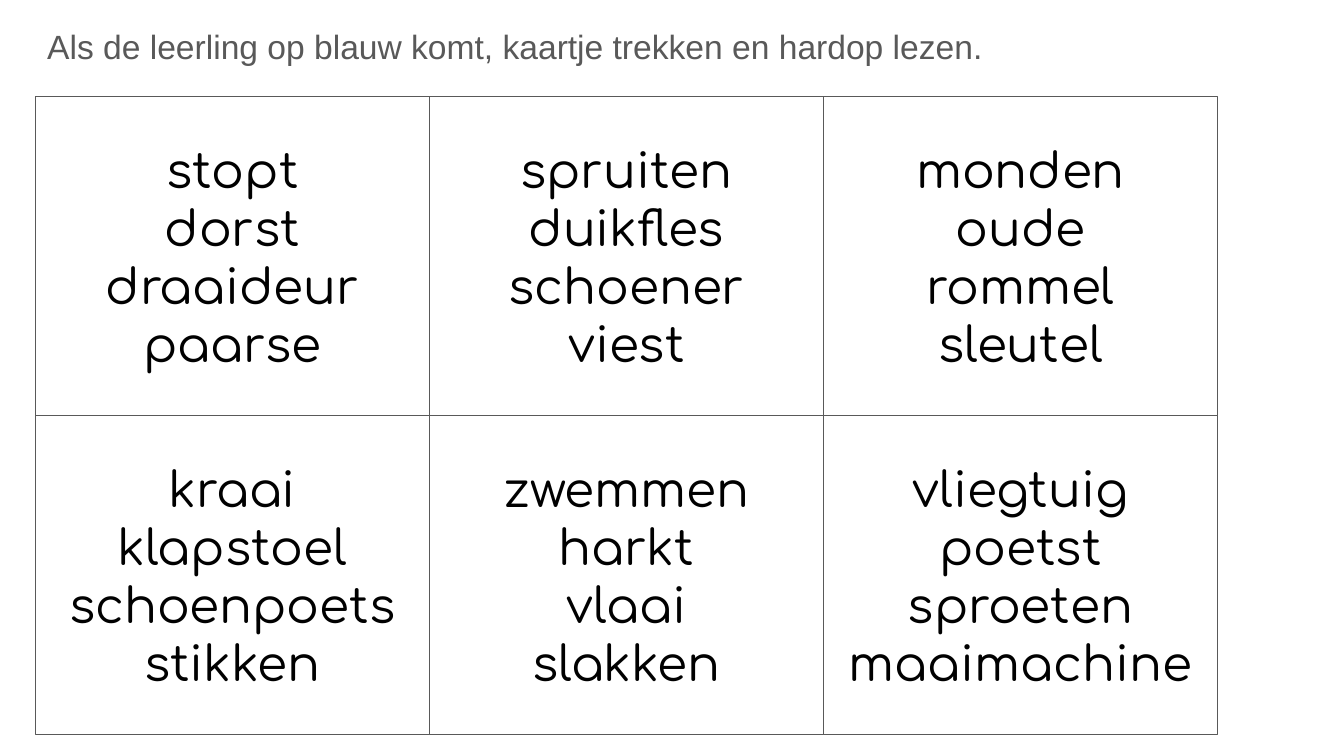
import dataclasses

import pptx
import pptx.dml.color
import pptx.enum.shapes
import pptx.enum.text
import pptx.shapes.autoshape
import pptx.slide
import pptx.util

Pt = pptx.util.Pt
Align = pptx.enum.text.PP_ALIGN
Anchor = pptx.enum.text.MSO_ANCHOR

COLORS = {"card": "FFFFFF", "gray": "595959", "word": "000000"}
LEFT, TOP = 19, 51.8
WIDTH, HEIGHT = 211.1, 170.8
INSET = 7.2
FRAME = {
    "word_wrap": True,
    "margin_left": Pt(INSET),
    "margin_right": Pt(INSET),
    "margin_top": Pt(INSET),
    "margin_bottom": Pt(INSET),
}


@dataclasses.dataclass
class Style:
    font: str
    size: float
    color: str
    align: Align
    anchor: Anchor


@dataclasses.dataclass
class Card:
    row: int
    col: int
    words: str


TITLE = Style("Arial", 18, "gray", Align.LEFT, Anchor.TOP)
WORDS = Style("Comfortaa", 26, "word", Align.CENTER, Anchor.MIDDLE)

CARDS = [
    Card(0, 0, "stopt dorst draaideur paarse"),
    Card(0, 1, "spruiten duikfles schoener viest"),
    Card(0, 2, "monden oude rommel sleutel"),
    Card(1, 0, "kraai klapstoel schoenpoets stikken"),
    Card(1, 1, "zwemmen harkt vlaai slakken"),
    Card(1, 2, "vliegtuig poetst sproeten maaimachine"),
]


def tint(name: str) -> pptx.dml.color.RGBColor:
    return pptx.dml.color.RGBColor.from_string(COLORS[name])


def apply(target: object, values: dict) -> None:
    for name, value in values.items():
        setattr(target, name, value)


def write(shape: pptx.shapes.autoshape.Shape, lines: list[str], style: Style) -> None:
    frame = shape.text_frame
    apply(frame, FRAME | {"vertical_anchor": style.anchor})
    frame.text = "\n".join(lines)
    for para in frame.paragraphs:
        para.alignment = style.align
        font = para.runs[0].font
        apply(font, {"name": style.font, "size": Pt(style.size)})
        font.color.rgb = tint(style.color)


def draw(slide: pptx.slide.Slide, card: Card) -> None:
    shape = slide.shapes.add_shape(
        pptx.enum.shapes.MSO_SHAPE.RECTANGLE,
        Pt(LEFT + card.col * WIDTH),
        Pt(TOP + card.row * HEIGHT),
        Pt(WIDTH),
        Pt(HEIGHT),
    )
    shape.shadow.inherit = False
    shape.fill.solid()
    shape.fill.fore_color.rgb = tint("card")
    shape.line.color.rgb = tint("gray")
    shape.line.width = Pt(0.75)
    write(shape, card.words.split(), WORDS)


def main() -> None:
    deck = pptx.Presentation()
    apply(deck, {"slide_width": Pt(720), "slide_height": Pt(405)})
    slide = deck.slides.add_slide(deck.slide_layouts[6])
    title = slide.shapes.add_textbox(Pt(18.2), Pt(6.5), Pt(635), Pt(39))
    write(
        title,
        ["Als de leerling op blauw komt, kaartje trekken en hardop lezen."],
        TITLE,
    )
    for card in CARDS:
        draw(slide, card)
    deck.save("out.pptx")


if __name__ == "__main__":
    main()
